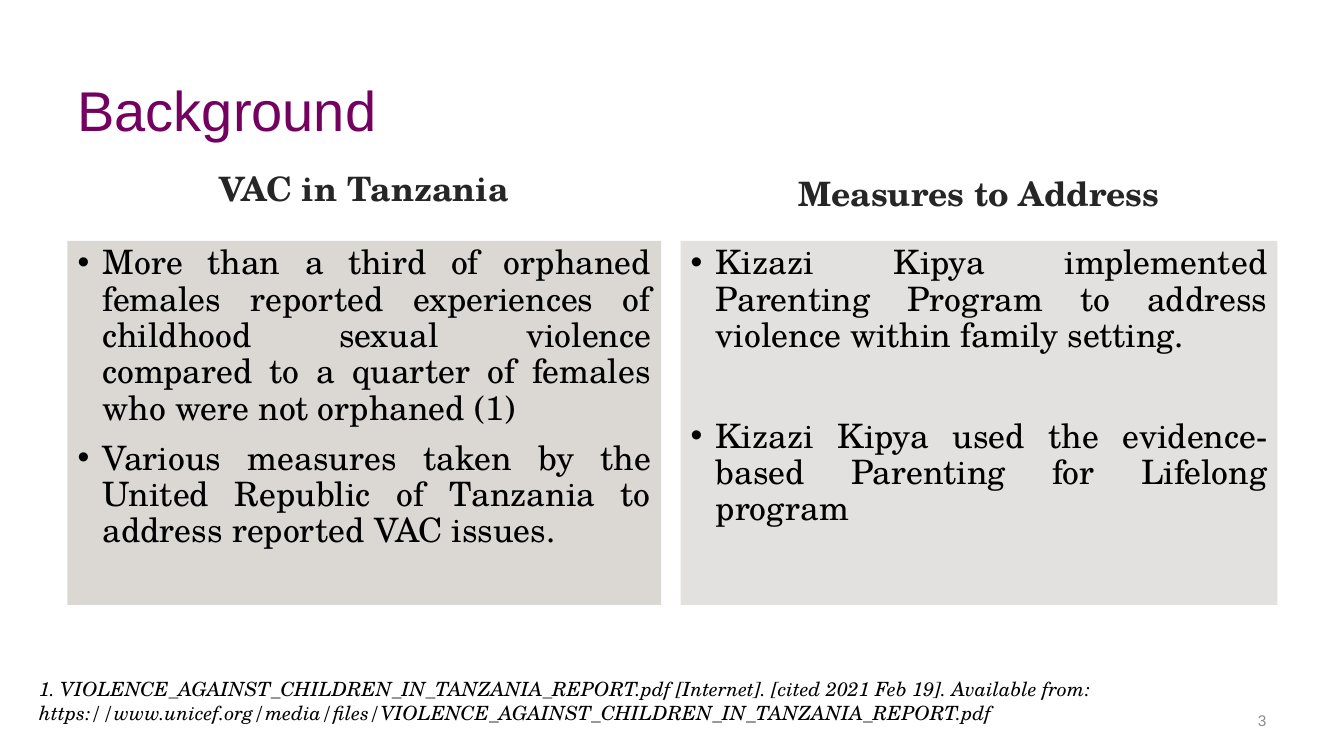
from lxml import etree
from pptx import Presentation
from pptx import util as u
from pptx.dml.color import RGBColor
from pptx.enum import text
from pptx.oxml.ns import qn

COLORS = {"title": "74005F", "heading": "262626", "body": "000000",
          "number": "8C8C8C", "left": "DBD7D3", "right": "E3E1DF"}
SANS, SERIF = "Arial", "TeX Gyre Schola"
ALIGN, ANCHOR = text.PP_ALIGN, text.MSO_ANCHOR


def place(sp, left, top, width, height, anchor):
    """Position a text shape in centimetres and fix how its text sits."""
    sp.left, sp.top, sp.width, sp.height = map(u.Cm, (left, top, width, height))
    tf = sp.text_frame
    frame = {"word_wrap": True, "auto_size": text.MSO_AUTO_SIZE.NONE,
             "vertical_anchor": anchor}
    for name, value in frame.items():
        setattr(tf, name, value)
    return tf


def write(p, words, color, align, spacing=0.9, before=0, **font):
    """Fill a paragraph with one formatted run."""
    layout = {"alignment": align, "line_spacing": spacing,
              "space_before": u.Pt(before)}
    for name, value in layout.items():
        setattr(p, name, value)
    r = p.add_run()
    r.text = words
    for name, value in font.items():
        setattr(r.font, name, value)
    r.font.color.rgb = RGBColor.from_string(COLORS[color])


prs = Presentation()
prs.slide_width, prs.slide_height = u.Cm(33.87), u.Cm(19.05)
s = prs.slides.add_slide(prs.slide_layouts.get_by_name("Comparison"))
title, left_head, left_body, right_head, right_body = list(s.placeholders)[:5]

tf = place(title, 1.7, 1.02, 30.48, 3.68, ANCHOR.MIDDLE)
write(tf.paragraphs[0], "Background", "title", ALIGN.LEFT,
      name=SANS, size=u.Pt(40))

# Each bullet is paired with its space before, in points
columns = [
    (left_head, left_body, "left", 1.7, 14.96, 3.99, "VAC in Tanzania", [
        ("More than a third of orphaned females reported experiences of "
         "childhood sexual violence compared to a quarter of females who "
         "were not orphaned (1)", 0),
        ("Various measures taken by the United Republic of Tanzania to "
         "address reported VAC issues.", 10)]),
    (right_head, right_body, "right", 17.15, 15.04, 4.11, "Measures to Address", [
        ("Kizazi Kipya implemented Parenting Program to address violence "
         "within family setting.", 0),
        ("Kizazi Kipya used the evidence-based Parenting for Lifelong "
         "program", 46)]),
]
for head, body, fill, left, width, head_top, heading, bullets in columns:
    tf = place(head, left, head_top, width, 1.4, ANCHOR.BOTTOM)
    write(tf.paragraphs[0], heading, "heading", ALIGN.CENTER,
          name=SERIF, size=u.Pt(24), bold=True)

    tf = place(body, left, 6.07, width, 9.17, ANCHOR.TOP)
    body.fill.solid()
    body.fill.fore_color.rgb = RGBColor.from_string(COLORS[fill])
    for i, (words, before) in enumerate(bullets):
        p = tf.add_paragraph() if i else tf.paragraphs[0]
        pPr = p._p.get_or_add_pPr()
        pPr.set("marL", str(u.Cm(0.635)))
        pPr.set("indent", str(u.Cm(-0.635)))
        etree.SubElement(pPr, qn("a:buFont"), typeface="Arial")
        etree.SubElement(pPr, qn("a:buChar"), char="•")
        write(p, words, "body", ALIGN.JUSTIFY, before=before,
              name=SERIF, size=u.Pt(24))

number = s.shapes.add_textbox(0, 0, 0, 0)
tf = place(number, 28.78, 17.65, 3.39, 1.02, ANCHOR.MIDDLE)
write(tf.paragraphs[0], "3", "number", ALIGN.RIGHT, 1.0,
      name=SANS, size=u.Pt(11))

reference = s.shapes.add_textbox(0, 0, 0, 0)
tf = place(reference, 0.74, 16.94, 31.85, 1.45, ANCHOR.TOP)
write(tf.paragraphs[0],
      "1. VIOLENCE_AGAINST_CHILDREN_IN_TANZANIA_REPORT.pdf [Internet]. "
      "[cited 2021 Feb 19]. Available from: https://www.unicef.org/media/"
      "files/VIOLENCE_AGAINST_CHILDREN_IN_TANZANIA_REPORT.pdf",
      "body", ALIGN.LEFT, 1.0, name=SERIF, size=u.Pt(14), italic=True)

prs.save("out.pptx")
